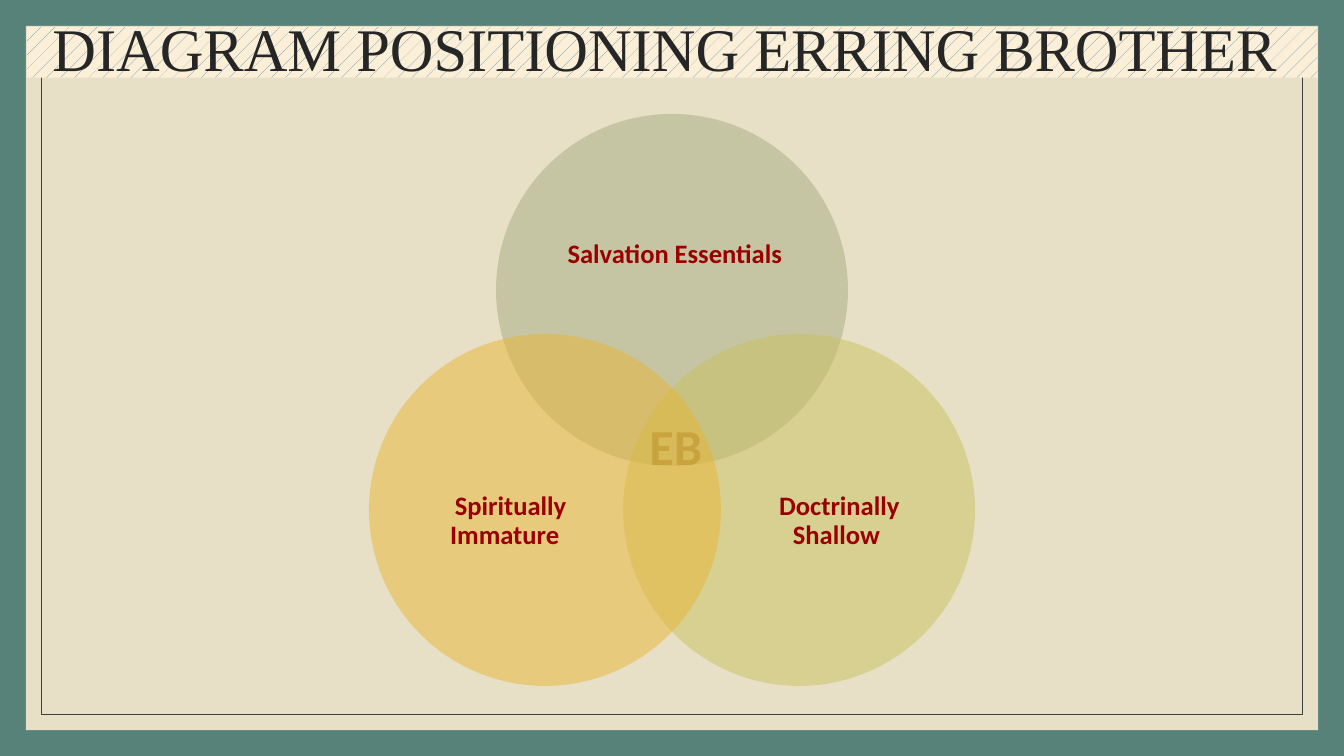
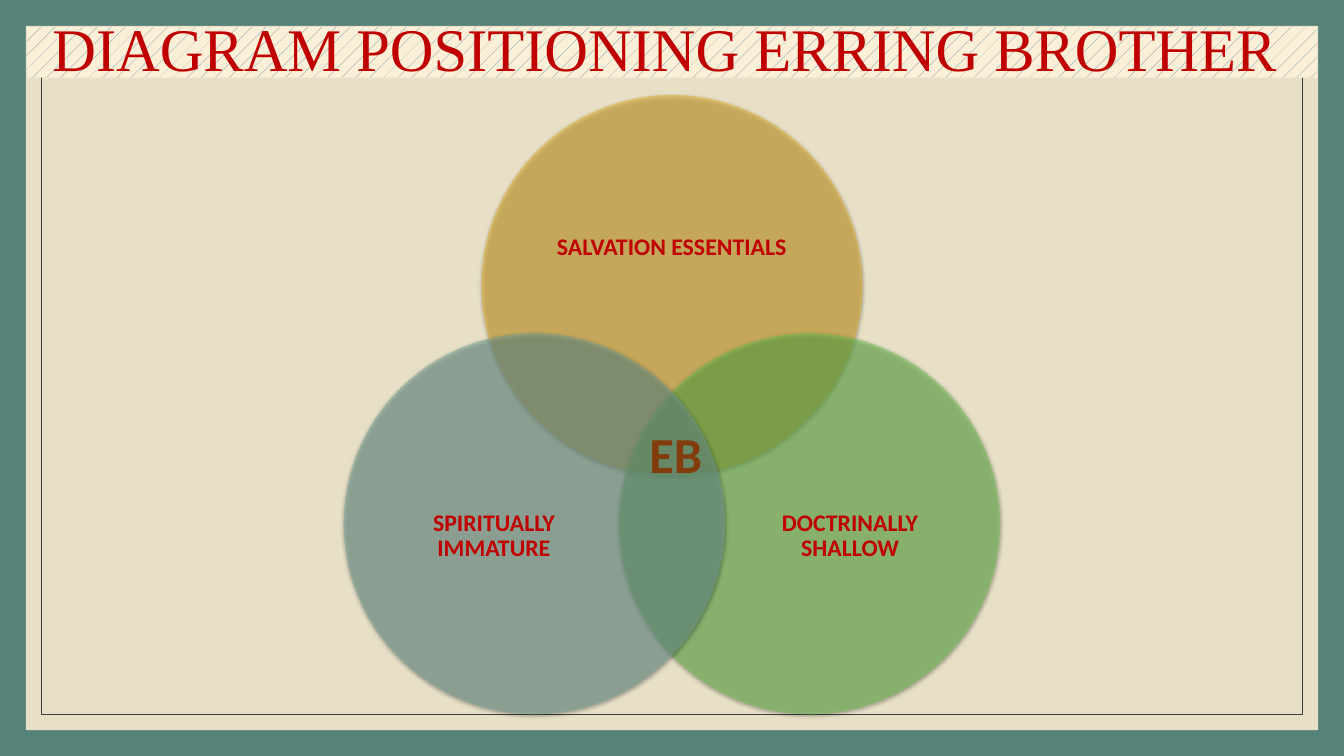
from lxml import etree
from pptx import Presentation
from pptx.dml.color import RGBColor
from pptx.enum import dml, shapes, text
from pptx.oxml.ns import qn
from pptx.util import Pt

WIDTH, HEIGHT = 960, 540
TITLE = "DIAGRAM POSITIONING ERRING BROTHER"
TITLE_BOX = (19.4, 19.4, 921.6, 36)
TITLE_FONT, BODY_FONT = "Times New Roman", "Calibri"
COLORS = {"border": "578279", "panel": "E7E0C7", "rule": "404040",
          "hatch": "5986AB", "band": "FBF0D7"}

# Circles run top, right, left: the order in which they overlap.
SLIDES = [
    {"title_color": "262626", "diameter": 251.4, "top": 81.4, "shadow": False,
     "label_size": 19, "label_color": "990000",
     "circles": [(" Salvation Essentials", "A5AB81"),
                 (" Doctrinally Shallow", "C9C15C"),
                 (" Spiritually Immature ", "E9B635")],
     "center": ("EB", "C9A43E", 290.2)},
    {"title_color": "C00000", "diameter": 272.3, "top": 67.8, "shadow": True,
     "label_size": 17, "label_color": "C00000",
     "circles": [("SALVATION ESSENTIALS", "ECB730"),
                 ("DOCTRINALLY SHALLOW", "73CA55"),
                 ("SPIRITUALLY IMMATURE", "79A79D")],
     "center": ("EB", "833C0B", 295.9)},
]

# As shares of the diameter: circle offset from the top circle,
# then the label's left, top, width and height inside its circle.
VENN = [((0, 0), (0.133, 0.175, 0.733, 0.45)),
        ((0.361, 0.625), (0.306, 0.258, 0.6, 0.55)),
        ((-0.361, 0.625), (0.094, 0.258, 0.6, 0.55))]


def rgb(value):
    return RGBColor.from_string(value)


def points(box):
    return [Pt(v) for v in box]


def write(sp, content, font, align, spacing=0.9, **frame):
    """Put one formatted paragraph into a shape."""
    tf = sp.text_frame
    for name, value in {"word_wrap": True, "auto_size": text.MSO_AUTO_SIZE.NONE,
                        **frame}.items():
        setattr(tf, name, value)
    p = tf.paragraphs[0]
    p.alignment, p.line_spacing = align, spacing
    r = p.add_run()
    r.text = content
    r.font.color.rgb = rgb(font.pop("color"))
    for name, value in font.items():
        setattr(r.font, name, value)


def add_plain(slide, kind, box, fill=None, line=None):
    sp = slide.shapes.add_shape(kind, *points(box))
    sp.shadow.inherit = False
    if fill:
        sp.fill.solid()
        sp.fill.fore_color.rgb = rgb(fill)
    else:
        sp.fill.background()
    if line:
        sp.line.color.rgb, sp.line.width = rgb(line), Pt(0.5)
    else:
        sp.line.fill.background()
    return sp


def add_alpha(color, percent):
    etree.SubElement(color, qn("a:alpha"), val=str(percent * 1000))


def add_shadow(sp):
    effects = sp._element.spPr.find(qn("a:effectLst"))
    shadow = etree.SubElement(effects, qn("a:outerShdw"), blurRad=str(Pt(3)),
                              dist=str(Pt(1)), dir="5400000", rotWithShape="0")
    add_alpha(etree.SubElement(shadow, qn("a:srgbClr"), val="000000"), 63)


def add_frame(master, slide):
    """Draw the panel and its rule, then move them to the back of the master."""
    master.background.fill.solid()
    master.background.fill.fore_color.rgb = rgb(COLORS["border"])
    frame = [(18.5, COLORS["panel"], None), (29.5, None, COLORS["rule"])]
    for i, (inset, fill, line) in enumerate(frame):
        box = (inset, inset, WIDTH - 2 * inset, HEIGHT - 2 * inset)
        sp = add_plain(slide, shapes.MSO_SHAPE.RECTANGLE, box, fill, line)
        master.shapes._spTree.insert(2 + i, sp._element)


def add_title(slide, color):
    sp = slide.shapes.title
    sp.left, sp.top, sp.width, sp.height = points(TITLE_BOX)
    sp.fill.patterned()
    sp.fill.pattern = dml.MSO_PATTERN.PERCENT_5
    sp.fill.fore_color.rgb = rgb(COLORS["hatch"])
    sp.fill.back_color.rgb = rgb(COLORS["band"])
    write(sp, " " + TITLE, {"size": Pt(43.2), "name": TITLE_FONT, "color": color},
          text.PP_ALIGN.LEFT, vertical_anchor=text.MSO_ANCHOR.MIDDLE)


def add_venn(slide, data):
    d = data["diameter"]
    for (label, color), ((dx, dy), (lx, ly, lw, lh)) in zip(data["circles"], VENN):
        x, y = (WIDTH - d) / 2 + dx * d, data["top"] + dy * d
        circle = add_plain(slide, shapes.MSO_SHAPE.OVAL, (x, y, d, d), color)
        add_alpha(circle._element.spPr.find(qn("a:solidFill"))[0], 50)
        if data["shadow"]:
            add_shadow(circle)
        box = (x + lx * d, y + ly * d, lw * d, lh * d)
        write(slide.shapes.add_textbox(*points(box)), label,
              {"size": Pt(data["label_size"]), "name": BODY_FONT, "bold": True,
               "color": data["label_color"]},
              text.PP_ALIGN.CENTER, vertical_anchor=text.MSO_ANCHOR.MIDDLE,
              margin_left=0, margin_right=0, margin_top=0, margin_bottom=0)
    label, color, top = data["center"]
    write(slide.shapes.add_textbox(*points((419, top, 127.4, 40.3))), label,
          {"size": Pt(36), "name": BODY_FONT, "bold": True, "color": color},
          text.PP_ALIGN.CENTER, spacing=1.07)


def main():
    prs = Presentation()
    prs.slide_width, prs.slide_height = Pt(WIDTH), Pt(HEIGHT)
    for i, data in enumerate(SLIDES):
        slide = prs.slides.add_slide(prs.slide_layouts[5])
        if i == 0:
            add_frame(prs.slide_master, slide)
        add_title(slide, data["title_color"])
        add_venn(slide, data)
    prs.save("out.pptx")


if __name__ == "__main__":
    main()
